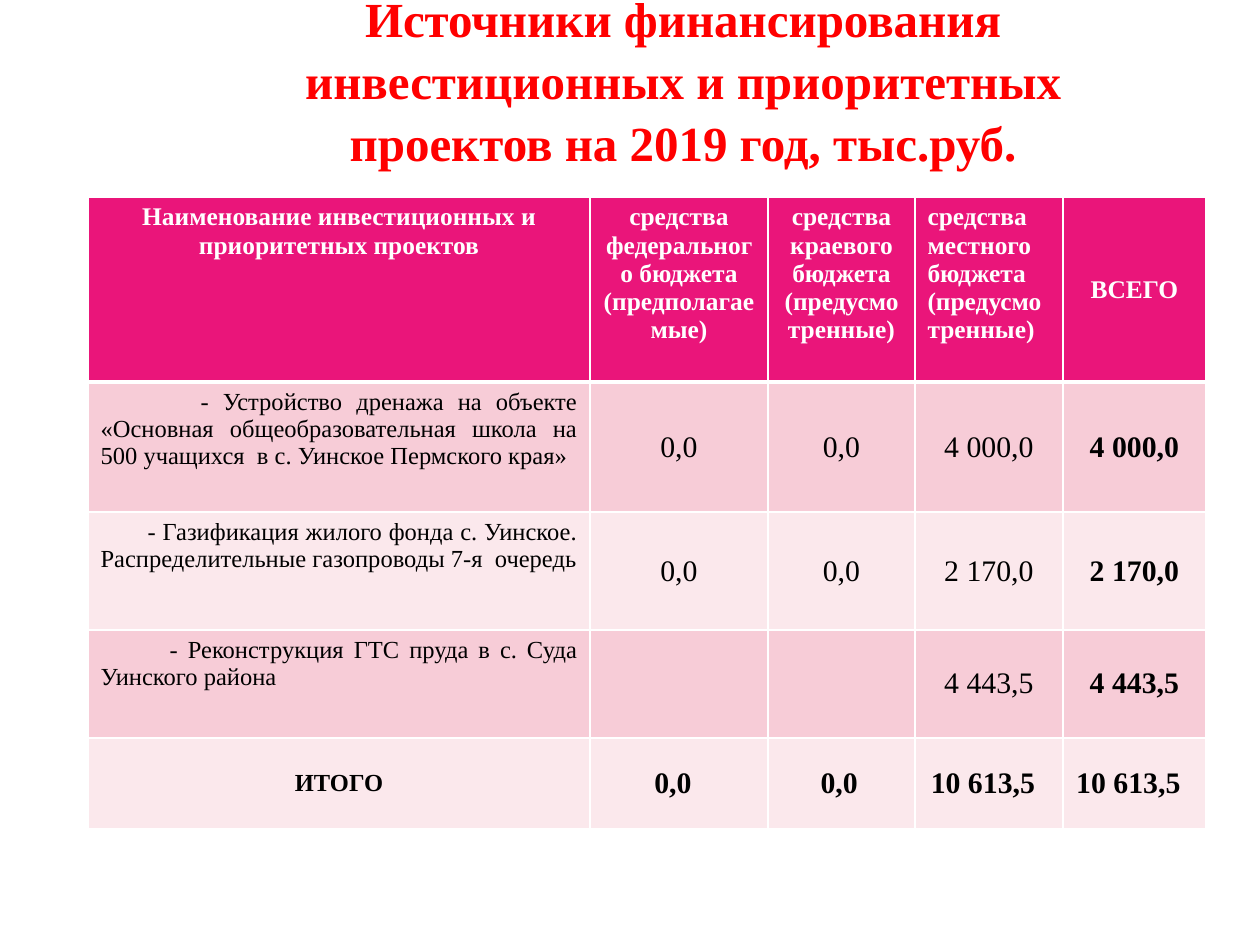
from dataclasses import dataclass
from typing import Optional

from lxml import etree
from pptx import Presentation, util as u
from pptx.dml.color import RGBColor
from pptx.enum import text
from pptx.oxml import ns

PX_PER_INCH = 126
LEFT, CENTER, JUSTIFY = text.PP_ALIGN.LEFT, text.PP_ALIGN.CENTER, text.PP_ALIGN.JUSTIFY
TOP, MIDDLE = text.MSO_ANCHOR.TOP, text.MSO_ANCHOR.MIDDLE


def px(length: int) -> int:
    return round(length * 914400 / PX_PER_INCH)


@dataclass(frozen=True)
class Theme:
    font: str = "Times New Roman"
    title: str = "FF0000"
    header: str = "EA157A"
    bands: tuple = ("F7CCD7", "FBE8EC")
    light: str = "FFFFFF"
    dark: str = "000000"
    title_size: float = 28
    header_size: float = 14.5
    project_size: float = 14
    amount_size: float = 17


@dataclass(frozen=True)
class Entry:
    words: str
    size: float
    color: str
    bold: bool = False
    align: int = CENTER
    anchor: int = MIDDLE
    indent: int = 0
    margins: Optional[tuple] = None


@dataclass(frozen=True)
class Project:
    name: str
    indent: int
    amounts: tuple


THEME = Theme()
COLUMNS = (502, 178, 147, 148, 143)
ROWS = (185, 130, 118, 108, 91)
TOTAL_MARGINS = (1, 1, 13, 0)

HEADINGS = (
    ("Наименование инвестиционных и приоритетных проектов", CENTER, TOP),
    ("средства федерального бюджета (предполагаемые)", CENTER, TOP),
    ("средства краевого бюджета (предусмотренные)", CENTER, TOP),
    ("средства местного бюджета (предусмотренные)", LEFT, TOP),
    ("ВСЕГО", CENTER, MIDDLE),
)
PROJECTS = (
    Project("- Устройство дренажа на объекте «Основная общеобразовательная школа "
            "на 500 учащихся  в с. Уинское Пермского края»",
            100, ("0,0", "0,0", "4 000,0", "4 000,0")),
    Project("- Газификация жилого фонда с. Уинское. Распределительные газопроводы "
            "7-я  очередь",
            47, ("0,0", "0,0", "2 170,0", "2 170,0")),
    Project("- Реконструкция ГТС пруда в с. Суда Уинского района",
            69, ("", "", "4 443,5", "4 443,5")),
)
TOTALS = ("0,0", " 0,0", "10 613,5", "10 613,5")


def style(paragraph, size: float, color: str, bold: bool, align: int) -> None:
    paragraph.alignment = align
    font = paragraph.font
    font.name, font.size, font.bold = THEME.font, u.Pt(size), bold
    font.color.rgb = RGBColor.from_string(color)


def draw_border(cell, side: str, points: int) -> None:
    line = etree.SubElement(cell._tc.get_or_add_tcPr(), ns.qn(f"a:ln{side}"),
                            w=str(u.Pt(points)))
    fill = etree.SubElement(line, ns.qn("a:solidFill"))
    etree.SubElement(fill, ns.qn("a:srgbClr"), val=THEME.light)


def fill_cell(cell, entry: Entry, background: str, row: int) -> None:
    for side in "LRTB":
        beside_header = (row, side) in ((0, "B"), (1, "T"))
        draw_border(cell, side, 3 if beside_header else 1)
    cell.fill.solid()
    cell.fill.fore_color.rgb = RGBColor.from_string(background)
    cell.vertical_anchor = entry.anchor
    if entry.margins:
        (cell.margin_left, cell.margin_top,
         cell.margin_right, cell.margin_bottom) = map(px, entry.margins)
    cell.text = entry.words
    paragraph = cell.text_frame.paragraphs[0]
    style(paragraph, entry.size, entry.color, entry.bold, entry.align)
    if entry.indent:
        paragraph._p.get_or_add_pPr().set("indent", str(px(entry.indent)))


def project_entries(project: Project) -> list[Entry]:
    name = Entry(project.name, THEME.project_size, THEME.dark, align=JUSTIFY,
                 anchor=TOP, indent=project.indent)
    last = len(project.amounts) - 1
    return [name] + [Entry(amount, THEME.amount_size, THEME.dark, bold=i == last)
                     for i, amount in enumerate(project.amounts)]


def draw_title(slide) -> None:
    title = slide.shapes.add_textbox(px(186), px(29), px(994), px(158)).text_frame
    title.word_wrap = True
    title.vertical_anchor = MIDDLE
    title.text = ("Источники финансирования инвестиционных и приоритетных "
                  "проектов на 2019 год, тыс.руб.\v")
    heading = title.paragraphs[0]
    heading.line_spacing = 1.05
    style(heading, THEME.title_size, THEME.title, True, CENTER)


def draw_funding(slide) -> None:
    header = [Entry(words, THEME.header_size, THEME.light, True, align, anchor)
              for words, align, anchor in HEADINGS]
    totals = [Entry("ИТОГО", THEME.project_size, THEME.dark, True)]
    totals += [Entry(amount, THEME.amount_size, THEME.dark, True,
                     margins=TOTAL_MARGINS) for amount in TOTALS]
    entries = [header, *map(project_entries, PROJECTS), totals]

    funding = slide.shapes.add_table(len(ROWS), len(COLUMNS), px(88), px(197),
                                     px(sum(COLUMNS)), px(sum(ROWS))).table
    for column, width in zip(funding.columns, COLUMNS):
        column.width = px(width)
    for row, height in zip(funding.rows, ROWS):
        row.height = px(height)
    for r, row_entries in enumerate(entries):
        background = THEME.bands[(r - 1) % 2] if r else THEME.header
        for c, entry in enumerate(row_entries):
            fill_cell(funding.cell(r, c), entry, background, r)


def main() -> None:
    deck = Presentation()
    deck.slide_width, deck.slide_height = px(1260), px(945)
    slide = deck.slides.add_slide(deck.slide_layouts[6])
    draw_title(slide)
    draw_funding(slide)
    deck.save("out.pptx")


if __name__ == "__main__":
    main()
